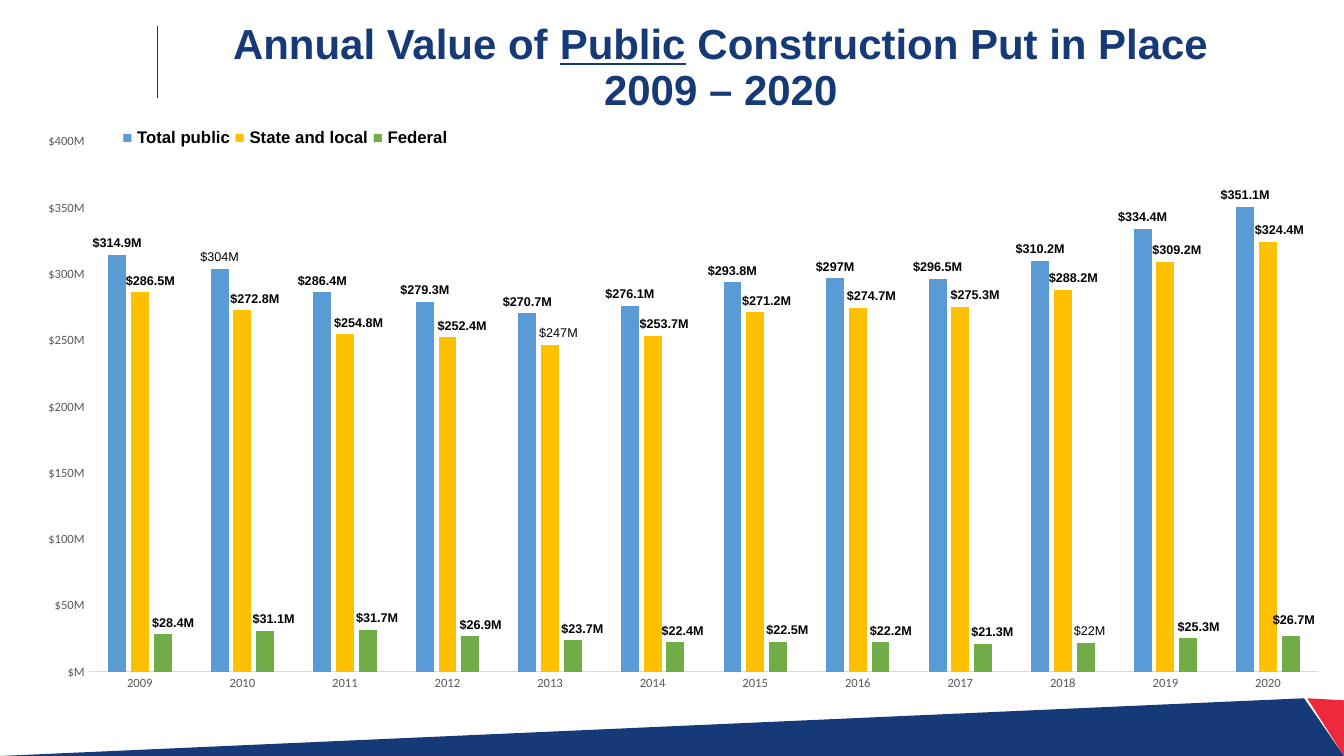
from lxml import etree
from pptx import Presentation
from pptx.chart.data import CategoryChartData
from pptx.dml.color import RGBColor
from pptx.enum.chart import XL_CHART_TYPE as ChartType
from pptx.enum.chart import XL_LABEL_POSITION as LabelPosition
from pptx.enum.chart import XL_TICK_MARK as TickMark
from pptx.enum.shapes import MSO_CONNECTOR as Connector
from pptx.enum.text import MSO_ANCHOR as Anchor
from pptx.enum.text import PP_ALIGN as Align
from pptx.oxml import parse_xml
from pptx.oxml.ns import nsdecls, qn
from pptx.util import Pt

PX = 9525
WIDTH, HEIGHT = 1280, 720
COLORS = {"navy": "163A78", "red": "EE293C", "black": "000000",
          "gray": "595959", "axis": "D9D9D9",
          "blue": "5B9BD5", "gold": "FFC000", "green": "70AD47"}
AXIS_FORMAT = '"$"#,"M"'
LABEL_FORMAT = '"$"#.#,"M"'
YEARS = [str(year) for year in range(2009, 2021)]

# Name, color, values, and sideways label shift in px
SERIES = [
    ("Total public", "blue",
     [314900, 304000, 286400, 279300, 270700, 276100,
      293800, 297000, 296500, 310200, 334400, 351100],
     [0] * 12),
    ("State and local", "gold",
     [286500, 272800, 254800, 252400, 247000, 253700,
      271200, 274700, 275300, 288200, 309200, 324400],
     [10, 12, 13, 14, 8, 11, 11, 13, 14, 10, 11, 11]),
    ("Federal", "green",
     [28400, 31100, 31700, 26900, 23700, 22400,
      22500, 22200, 21300, 22000, 25300, 26700],
     [10, 8, 9, 10, 9, 7, 9, 10, 9, 4, 10, 3]),
]
# Whole-million labels: text and bold
WHOLE_LABELS = {304000: ("$304M", False), 297000: ("$297M", True),
                247000: ("$247M", False), 22000: ("$22M", False)}


def rgb(name):
    return RGBColor.from_string(COLORS[name])


def emu(*lengths):
    return [length * PX for length in lengths]


def set_font(font, size, color, name="Arial", bold=False):
    font.name, font.size, font.bold = name, Pt(size), bold
    font.color.rgb = rgb(color)


def add_polygon(page, points, color):
    builder = page.shapes.build_freeform(*points[0], scale=PX)
    builder.add_line_segments(points[1:], close=True)
    shape = builder.convert_to_shape()
    shape.shadow.inherit = False
    shape.fill.solid()
    shape.fill.fore_color.rgb = rgb(color)
    shape.line.fill.background()


def add_footer(page, left, top, width, height):
    right, bottom = left + width, top + height
    add_polygon(page, [(left, bottom), (right - 38, top), (right, bottom)], "navy")
    add_polygon(page, [(right - 35, top), (right, top + 2), (right, bottom)], "red")


def add_title(page, left, top, width, height):
    # Vertical rule at the left edge
    rule = page.shapes.add_connector(
        Connector.STRAIGHT, *emu(left, top - 8, left, top + 60))
    rule.line.color.rgb = rgb("navy")
    rule.line.width = Pt(0.5)
    etree.SubElement(rule._element.spPr, qn("a:effectLst"))

    # Two centered lines
    frame = page.shapes.add_textbox(*emu(left, top, width, height)).text_frame
    frame.word_wrap = True
    frame.vertical_anchor = Anchor.MIDDLE
    first, second = frame.paragraphs[0], frame.add_paragraph()
    for text in ("Annual Value of ", "Public", " Construction Put in Place"):
        span = first.add_run()
        span.text = text
        if text == "Public":
            span.font.underline = True
    second.text = "2009 – 2020"
    for para in (first, second):
        para.alignment = Align.CENTER
        para.line_spacing = 0.9
        set_font(para.font, 30, "navy", bold=True)


def add_legend(page, left, top, width, height):
    frame = page.shapes.add_textbox(*emu(left, top, width, height)).text_frame
    frame.word_wrap = False
    para = frame.paragraphs[0]
    for index, (name, color, _, _) in enumerate(SERIES):
        gap = " " if index < len(SERIES) - 1 else ""
        for text, tint in (("■ ", color), (name + gap, "black")):
            span = para.add_run()
            span.text = text
            set_font(span.font, 12, tint, bold=True)


def manual_layout(**settings):
    parts = "".join(f'<c:{key} val="{value}"/>' for key, value in settings.items())
    return parse_xml(f'<c:layout {nsdecls("c")}><c:manualLayout>{parts}'
                     "</c:manualLayout></c:layout>")


def label_point(series, index, value, shift, rise, box):
    label = series.points[index].data_label
    if value in WHOLE_LABELS:
        text, bold = WHOLE_LABELS[value]
        para = label.text_frame.paragraphs[0]
        span = para.add_run()
        span.text = text
        set_font(span.font, 9, "black", bold=bold)
    else:
        set_font(label.font, 9, "black", bold=True)
    label.position = LabelPosition.OUTSIDE_END
    node = series._element.dLbls.xpath(f'c:dLbl[c:idx/@val="{index}"]')[0]
    if value not in WHOLE_LABELS:
        number_format = parse_xml(f'<c:numFmt {nsdecls("c")} sourceLinked="0"/>')
        number_format.set("formatCode", LABEL_FORMAT)
        node.find(qn("c:txPr")).addprevious(number_format)
    if shift:
        node.insert(1, manual_layout(x=round(shift / box[2], 4),
                                     y=round(-rise / box[3], 4)))


def style_axis(axis):
    axis.has_major_gridlines = False
    axis.major_tick_mark = axis.minor_tick_mark = TickMark.NONE
    set_font(axis.tick_labels.font, 9, "gray", "Calibri")


def add_columns(page, *box):
    data = CategoryChartData(number_format="General")
    data.categories = YEARS
    for name, _, values, _ in SERIES:
        data.add_series(name, values)
    chart = page.shapes.add_chart(
        ChartType.COLUMN_CLUSTERED, *emu(*box), data).chart
    chart.has_legend = chart.has_title = False
    set_font(chart.font, 10, "black", "Calibri")

    # Axes and plot area
    style_axis(chart.category_axis)
    chart.category_axis.format.line.color.rgb = rgb("axis")
    chart.category_axis.format.line.width = Pt(0.75)
    values_axis = chart.value_axis
    style_axis(values_axis)
    values_axis.format.line.fill.background()
    values_axis.minimum_scale, values_axis.maximum_scale = 0, 400000
    values_axis.major_unit = 50000
    values_axis.tick_labels.number_format = AXIS_FORMAT
    values_axis.tick_labels.number_format_is_linked = False
    area = chart._chartSpace.chart.plotArea
    for old in area.findall(qn("c:layout")):
        area.remove(old)
    area.insert(0, manual_layout(layoutTarget="inner", xMode="edge", yMode="edge",
                                 x=0.049, y=0.013, w=0.951, h=0.944))

    # Columns and their labels
    plot = chart.plots[0]
    plot.gap_width, plot.overlap = 219, -27
    plot.vary_by_categories = False
    for series, (_, color, values, shifts) in zip(plot.series, SERIES):
        series.format.fill.solid()
        series.format.fill.fore_color.rgb = rgb(color)
        labels = series.data_labels
        labels.show_value = True
        labels.number_format = LABEL_FORMAT
        labels.number_format_is_linked = False
        labels.position = LabelPosition.OUTSIDE_END
        set_font(labels.font, 9, "black", bold=True)
        for index, (value, shift) in enumerate(zip(values, shifts)):
            if shift or value in WHOLE_LABELS:
                rise = 5 if value == 26700 else 0
                label_point(series, index, value, shift, rise, box)


def main():
    deck = Presentation()
    deck.slide_width, deck.slide_height = emu(WIDTH, HEIGHT)
    page = deck.slides.add_slide(deck.slide_layouts[6])
    add_footer(page, 0, 665, WIDTH, 55)
    add_title(page, 150, 33, 1073, 65)
    add_columns(page, 24, 128, 1233, 535)
    add_legend(page, 107, 116, 421, 32)
    deck.save("out.pptx")


if __name__ == "__main__":
    main()
